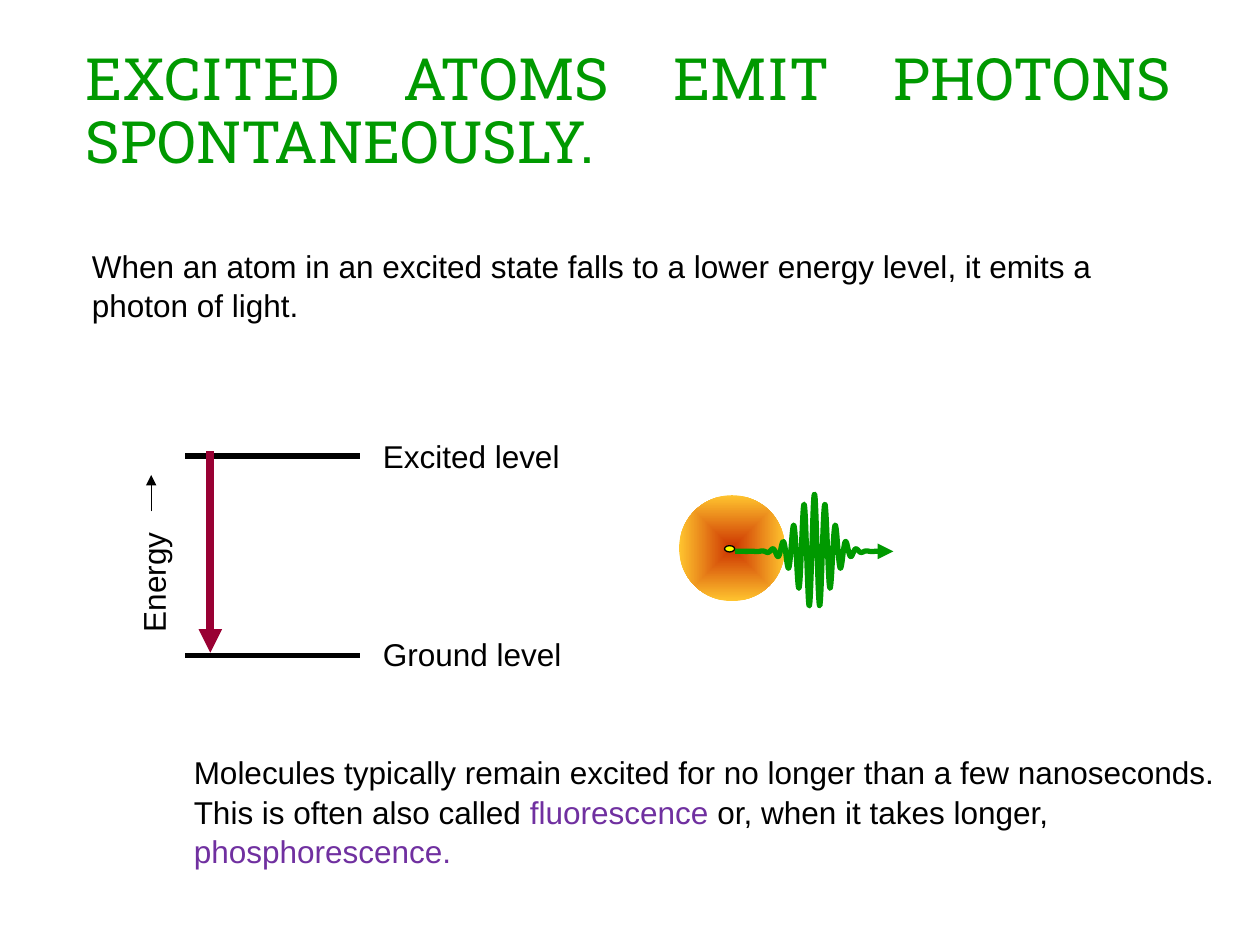
from math import cos, exp, pi

from lxml import etree
from pptx import Presentation
from pptx.dml.color import RGBColor
from pptx.enum.shapes import MSO_CONNECTOR as CONNECTOR, MSO_SHAPE as SHAPE
from pptx.enum.text import MSO_ANCHOR as ANCHOR, MSO_AUTO_SIZE as AUTO_SIZE, PP_ALIGN as ALIGN
from pptx.oxml.ns import qn
from pptx.util import Pt

THEME = {
    "green": RGBColor(0x00, 0x99, 0x00),
    "black": RGBColor(0x00, 0x00, 0x00),
    "purple": RGBColor(0x70, 0x30, 0xA0),
    "crimson": RGBColor(0x99, 0x00, 0x33),
    "atom_core": RGBColor(0xCC, 0x33, 0x00),
    "atom_rim": RGBColor(0xFF, 0xC4, 0x2F),
    "yellow": RGBColor(0xFF, 0xFF, 0x00),
    "title_font": "Roboto Slab",
    "body_font": "Arial",
    "title_size": Pt(33.3),
    "body_size": Pt(18),
}


def add_text(box, runs, wrap=True):
    left, top, width, height = map(Pt, box)
    shape = slide.shapes.add_textbox(left, top, width, height)
    frame = shape.text_frame
    frame.word_wrap = wrap
    frame.auto_size = AUTO_SIZE.SHAPE_TO_FIT_TEXT
    paragraph = frame.paragraphs[0]
    paragraph.line_spacing = 1.04
    for text, color in runs:
        run = paragraph.add_run()
        run.text = text
        run.font.name = THEME["body_font"]
        run.font.size = THEME["body_size"]
        run.font.color.rgb = THEME[color]
    return shape


def style_line(shape, color, width, arrow=False):
    shape.line.color.rgb = THEME[color]
    shape.line.width = Pt(width)
    if arrow:
        etree.SubElement(shape.line._get_or_add_ln(), qn("a:tailEnd"), type="triangle")


presentation = Presentation()
presentation.slide_width, presentation.slide_height = Pt(720), Pt(540)
slide = presentation.slides.add_slide(presentation.slide_layouts[5])

# Title
title = slide.shapes.title
title.left, title.top, title.width, title.height = Pt(41.8), Pt(30.2), Pt(635), Pt(74.2)
title.text_frame.auto_size = AUTO_SIZE.NONE
title.text_frame.vertical_anchor = ANCHOR.BOTTOM
paragraph = title.text_frame.paragraphs[0]
paragraph.alignment = ALIGN.JUSTIFY
paragraph.line_spacing = 0.9
run = paragraph.add_run()
run.text = "EXCITED ATOMS EMIT PHOTONS SPONTANEOUSLY."
run.font.name = THEME["title_font"]
run.font.size = THEME["title_size"]
run.font.color.rgb = THEME["green"]

# Atom with a gradient that radiates from its centre
atom = slide.shapes.add_shape(SHAPE.OVAL, Pt(388.1), Pt(283), Pt(60.5), Pt(60.5))
atom.shadow.inherit = False
atom.line.fill.background()
atom.fill.gradient()
for stop, color in zip(atom.fill.gradient_stops, ("atom_core", "atom_rim")):
    stop.color.rgb = THEME[color]
linear = atom.fill._fill._gradFill.find(qn("a:lin"))
radial = etree.Element(qn("a:path"), path="shape")
etree.SubElement(radial, qn("a:fillToRect"), l="50000", t="50000", r="50000", b="50000")
linear.getparent().replace(linear, radial)

# Nucleus
nucleus = slide.shapes.add_shape(SHAPE.OVAL, Pt(414), Pt(311.8), Pt(5.8), Pt(3.6))
nucleus.shadow.inherit = False
nucleus.fill.solid()
nucleus.fill.fore_color.rgb = THEME["yellow"]
style_line(nucleus, "black", 0.75)

# Photon: a cosine wave under a Gaussian envelope
wave_start, wave_end, wave_step = 420, 510.5, 0.25
center_x, center_y = 465.4, 315.1
amplitude, period, spread = 32.8, 6, 13.5
points = []
for index in range(int((wave_end - wave_start) / wave_step) + 1):
    x = wave_start + index * wave_step
    offset = x - center_x
    envelope = amplitude * exp(-((offset / spread) ** 2))
    points.append((Pt(x), Pt(center_y - envelope * cos(2 * pi * offset / period))))
builder = slide.shapes.build_freeform(*points[0])
builder.add_line_segments(points[1:], close=False)
photon = builder.convert_to_shape()
photon.shadow.inherit = False
photon.fill.background()
style_line(photon, "green", 3, arrow=True)

# Explanations
add_text((45.4, 136.8, 616.3, 55.4), [
    ("When an atom in an excited state falls to a lower energy level, "
     "it emits a photon of light.", "black"),
])
add_text((103.7, 426.2, 616.3, 72), [
    ("Molecules typically remain excited for no longer than a few nanoseconds. "
     "This is often also called ", "black"),
    ("fluorescence", "purple"),
    (" or, when it takes longer, ", "black"),
    ("phosphorescence.", "purple"),
])

# Energy diagram labels
energy = add_text((51.1, 318.2, 71.3, 28.8), [("Energy", "black")], wrap=False)
energy.rotation = 270
add_text((211.7, 358.6, 116.6, 28.8), [("Ground level", "black")], wrap=False)
add_text((211.7, 245.5, 115.2, 28.8), [("Excited level", "black")], wrap=False)

# Energy levels, axis arrow and transition arrow
diagram_lines = [
    ((105.8, 374.4), (205.9, 374.4), "black", 3, False),
    ((105.8, 260.6), (205.9, 260.6), "black", 3, False),
    ((86.4, 292.3), (86.4, 271.4), "black", 0.75, True),
    ((120.2, 257.8), (120.2, 373), "crimson", 4.5, True),
]
for start, end, color, width, arrow in diagram_lines:
    connector = slide.shapes.add_connector(CONNECTOR.STRAIGHT, *map(Pt, start + end))
    style_line(connector, color, width, arrow)
    etree.SubElement(connector._element.spPr, qn("a:effectLst"))

presentation.save("out.pptx")
